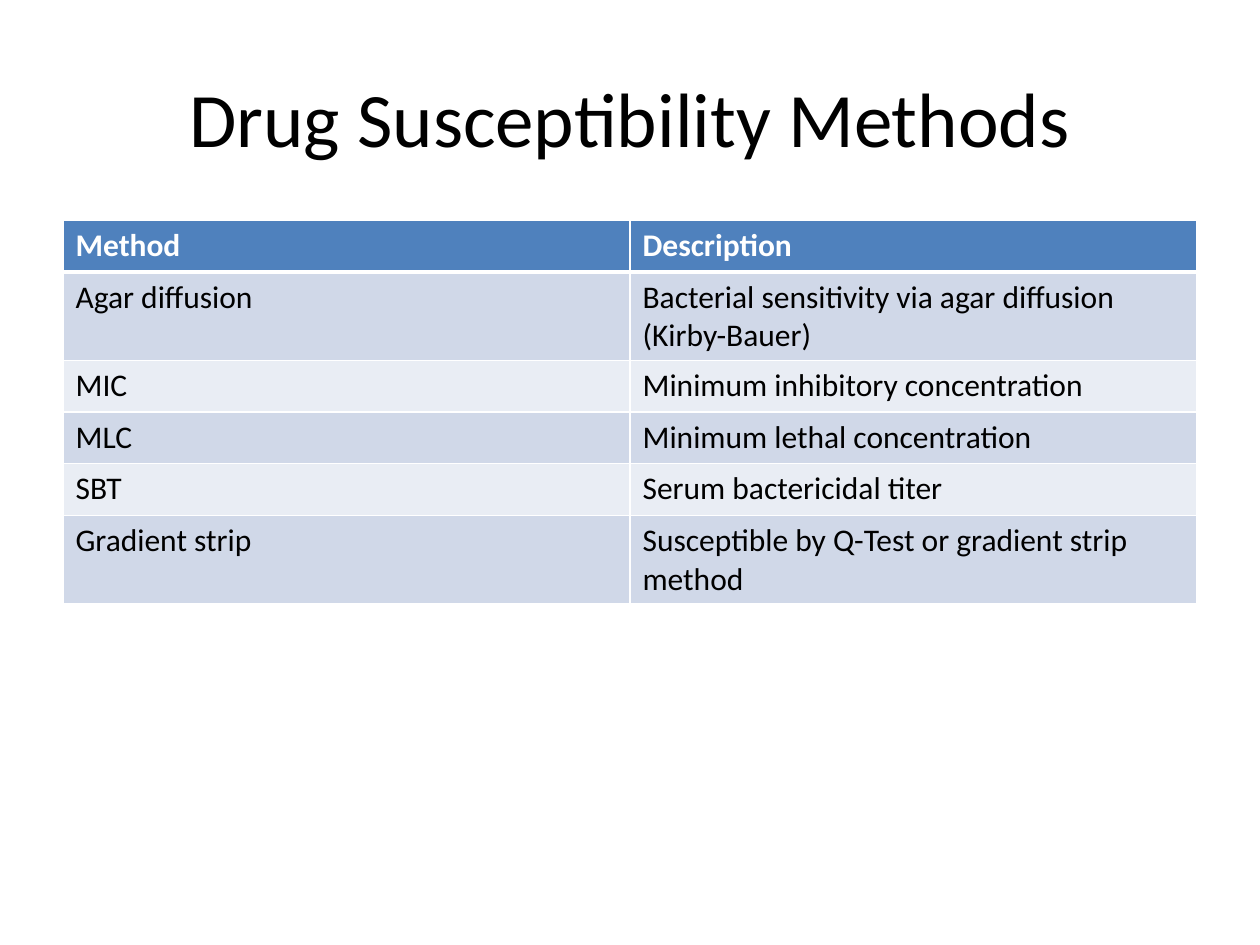
import pptx
import pptx.util
import pptx.dml.color
import pptx.enum.text
import pptx.oxml
import pptx.oxml.ns

TITLE = "Drug Susceptibility Methods"
ROWS = [
    ("Method", "Description"),
    ("Agar diffusion", "Bacterial sensitivity via agar diffusion (Kirby-Bauer)"),
    ("MIC", "Minimum inhibitory concentration"),
    ("MLC", "Minimum lethal concentration"),
    ("SBT", "Serum bactericidal titer"),
    ("Gradient strip", "Susceptible by Q-Test or gradient strip method"),
]
COLORS = {
    "text": "000000",
    "white": "FFFFFF",
    "header": "4F81BD",
    "odd": "D0D8E8",
    "even": "E9EDF4",
}
FONT = "Calibri"
WIDTH, HEIGHT = 10, 7.5
MARGIN = 0.05 * WIDTH
TITLE_TOP, TITLE_HEIGHT = 0.04 * HEIGHT, 1.25
TABLE_TOP, ROW_HEIGHT = 1.75, 0.41

inch = pptx.util.Inches
ALIGN = pptx.enum.text.PP_ALIGN


def rgb(name):
    return pptx.dml.color.RGBColor.from_string(COLORS[name])


def write(tf, text, size=18, color="text", bold=False, align=ALIGN.LEFT):
    tf.word_wrap = True
    p = tf.paragraphs[0]
    p.alignment = align
    r = p.add_run()
    r.text = text
    r.font.name = FONT
    r.font.size = pptx.util.Pt(size)
    r.font.bold = bold
    r.font.color.rgb = rgb(color)


def set_borders(cell, **widths):
    tc_pr = cell._tc.get_or_add_tcPr()
    for side, points in widths.items():
        tc_pr.append(pptx.oxml.parse_xml(
            f'<a:ln{side} {pptx.oxml.ns.nsdecls("a")} w="{pptx.util.Pt(points)}">'
            f'<a:solidFill><a:srgbClr val="{COLORS["white"]}"/></a:solidFill>'
            f'</a:ln{side}>'))


def main():
    prs = pptx.Presentation()
    prs.slide_width, prs.slide_height = inch(WIDTH), inch(HEIGHT)
    slide = prs.slides.add_slide(prs.slide_layouts[6])
    content_width = WIDTH - 2 * MARGIN

    sp = slide.shapes.add_textbox(inch(MARGIN), inch(TITLE_TOP),
                                  inch(content_width), inch(TITLE_HEIGHT))
    tf = sp.text_frame
    tf.vertical_anchor = pptx.enum.text.MSO_ANCHOR.MIDDLE
    write(tf, TITLE, size=44, align=ALIGN.CENTER)

    table = slide.shapes.add_table(
        len(ROWS), len(ROWS[0]), inch(MARGIN), inch(TABLE_TOP),
        inch(content_width), inch(ROW_HEIGHT * len(ROWS))).table
    for i, row in enumerate(ROWS):
        header = i == 0
        fill = "header" if header else "odd" if i % 2 else "even"
        for j, text in enumerate(row):
            cell = table.cell(i, j)
            write(cell.text_frame, text, color="white" if header else "text",
                  bold=header)
            set_borders(cell, L=1, R=1, T=3 if i == 1 else 1, B=3 if header else 1)
            cell.fill.solid()
            cell.fill.fore_color.rgb = rgb(fill)

    prs.save("out.pptx")


if __name__ == "__main__":
    main()
